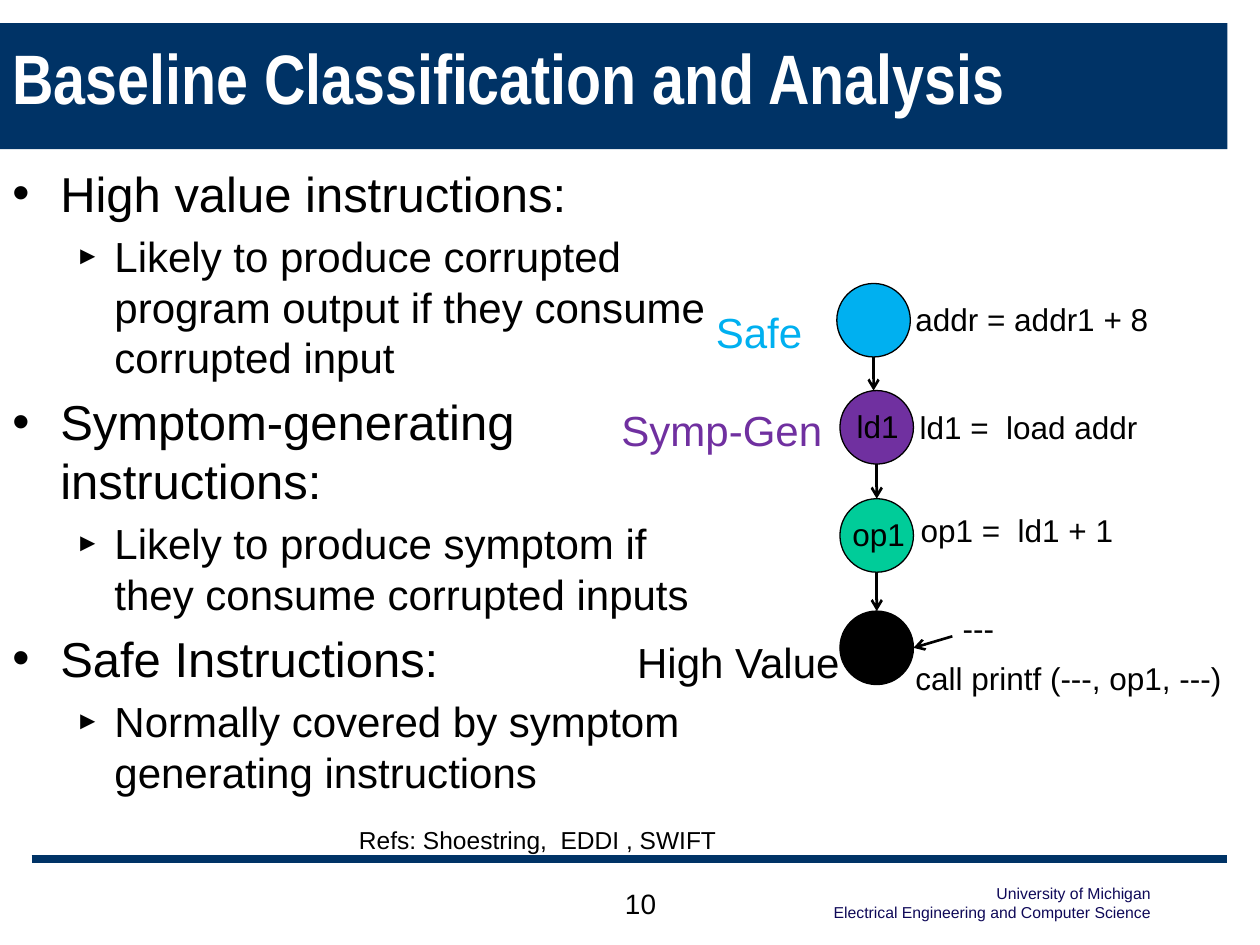
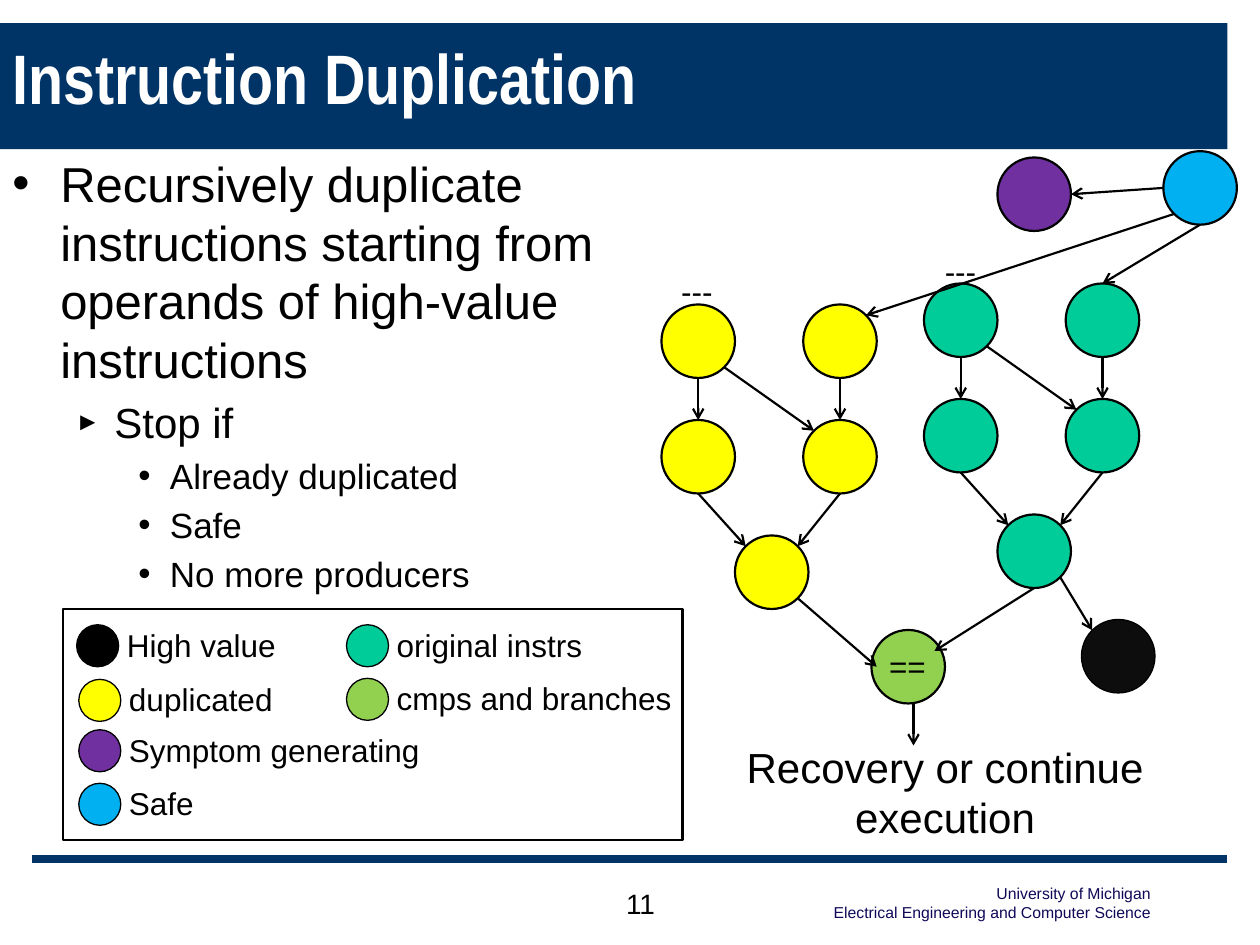
import math
from dataclasses import dataclass

import lxml.etree
import pptx
import pptx.dml.color
import pptx.enum.shapes
import pptx.enum.text
import pptx.oxml.ns
import pptx.util

ALIGN = pptx.enum.text.PP_ALIGN
ANCHOR = pptx.enum.text.MSO_ANCHOR
SHAPE = pptx.enum.shapes.MSO_SHAPE
COLUMNS, ROWS = 120, 90
COMPASS = {"E": 0, "SE": 45, "S": 90, "SW": 135, "W": 180, "NW": 225, "N": 270, "NE": 315}


@dataclass(frozen=True)
class Theme:
    navy: str = "003366"
    footer_ink: str = "0F0958"
    black: str = "000000"
    soft_black: str = "0D0D0D"
    white: str = "FFFFFF"
    safe: str = "00B0F0"
    symptom: str = "7030A0"
    original: str = "00CC99"
    duplicate: str = "FFFF00"
    compare: str = "92D050"
    font: str = "Arial"
    title_font: str = "Arial Narrow"
    title_size: int = 40
    label_size: int = 18
    large_size: int = 24
    reference_size: int = 14
    number_size: int = 16
    footer_size: int = 9
    thin: float = 0.75
    medium: float = 1.25
    thick: float = 1.5
    rule: float = 5


@dataclass(frozen=True)
class Level:
    size: int
    margin: float
    indent: float
    character: str
    scale: int = 100


LEVELS = (
    Level(28, 0.38, -0.38, "•"),
    Level(24, 0.81, -0.31, "►", 60),
    Level(20, 1.25, -0.25, "•"),
)


@dataclass(frozen=True)
class Node:
    left: float
    top: float
    size: float = 7

    def edge(self, direction):
        """Grid point on the circle in a compass direction."""
        angle = math.radians(COMPASS[direction])
        radius = self.size / 2
        return (self.left + radius * (1 + math.cos(angle)),
                self.top + radius * (1 + math.sin(angle)))


def add_element(parent, tag, **attributes):
    element = lxml.etree.SubElement(parent, pptx.oxml.ns.qn(tag))
    for name, value in attributes.items():
        element.set(name, str(value))
    return element


class Deck:
    def __init__(self, theme):
        self.theme = theme
        self.presentation = pptx.Presentation()
        self.presentation.slide_width = pptx.util.Inches(10)
        self.presentation.slide_height = pptx.util.Inches(7.5)
        self.slide = None

    def place(self, column, row):
        return (round(self.presentation.slide_width * column / COLUMNS),
                round(self.presentation.slide_height * row / ROWS))

    def new_slide(self, title, number):
        theme = self.theme
        self.slide = self.presentation.slides.add_slide(self.presentation.slide_layouts[6])
        self.shape(SHAPE.RECTANGLE, 0, 2.2, 116.9, 12, fill=theme.navy)
        self.connector((3, 81.8), (116.9, 81.8), theme.navy, theme.rule)
        self.text(["University of Michigan", "Electrical Engineering and Computer Science"],
                  74.76, 83.6, 36, size=theme.footer_size, color=theme.footer_ink,
                  align=ALIGN.RIGHT)
        self.text([title], 0, 2, 115, 10.6, size=theme.title_size, color=theme.white,
                  font=theme.title_font, bold=True, anchor=ANCHOR.MIDDLE)
        self.text([number], 47, 83.6, 28, size=theme.number_size,
                  align=ALIGN.CENTER, anchor=ANCHOR.MIDDLE)

    def outline(self, line, color, width):
        line.color.rgb = pptx.dml.color.RGBColor.from_string(color)
        line.width = pptx.util.Pt(width)

    def shape(self, kind, left, top, width, height, fill=None, line=None, weight=0.75):
        shape = self.slide.shapes.add_shape(
            kind, *self.place(left, top), *self.place(width, height))
        shape.shadow.inherit = False
        if fill:
            shape.fill.solid()
            shape.fill.fore_color.rgb = pptx.dml.color.RGBColor.from_string(fill)
        else:
            shape.fill.background()
        if line:
            self.outline(shape.line, line, weight)
        else:
            shape.line.fill.background()

    def node(self, left, top, fill, size=7, weight=None):
        self.shape(SHAPE.OVAL, left, top, size, size, fill, self.theme.black,
                   weight or self.theme.thin)
        return Node(left, top, size)

    def connector(self, start, end, color, width):
        connector = self.slide.shapes.add_connector(
            pptx.enum.shapes.MSO_CONNECTOR.STRAIGHT, *self.place(*start), *self.place(*end))
        self.outline(connector.line, color, width)
        add_element(connector._element.spPr, "a:effectLst")
        return connector

    def arrow(self, start, end, width=None):
        connector = self.connector(start, end, self.theme.black, width or self.theme.medium)
        add_element(connector.line._get_or_add_ln(), "a:tailEnd", type="arrow")

    def text_box(self, left, top, width, height, anchor=ANCHOR.TOP):
        box = self.slide.shapes.add_textbox(
            *self.place(left, top), *self.place(width, height))
        box.text_frame.word_wrap = True
        box.text_frame.vertical_anchor = anchor
        return box

    def run(self, paragraph, words, size, color, font=None, bold=False):
        run = paragraph.add_run()
        run.text = words
        run.font.size = pptx.util.Pt(size)
        run.font.name = font or self.theme.font
        run.font.bold = bold
        run.font.color.rgb = pptx.dml.color.RGBColor.from_string(color)

    def paragraph(self, frame, index):
        return frame.add_paragraph() if index else frame.paragraphs[0]

    def text(self, lines, left, top, width, height=4.8, size=None, color=None, font=None,
             bold=False, align=ALIGN.LEFT, anchor=ANCHOR.TOP, border=None):
        box = self.text_box(left, top, width, height, anchor)
        if border:
            self.outline(box.line, border, self.theme.thin)
        for index, words in enumerate(lines):
            paragraph = self.paragraph(box.text_frame, index)
            paragraph.alignment = align
            self.run(paragraph, words, size or self.theme.label_size,
                     color or self.theme.black, font, bold)

    def bullets(self, items, left, top, width, height):
        """Add (level, words) items as a bulleted list."""
        frame = self.text_box(left, top, width, height).text_frame
        for index, (depth, words) in enumerate(items):
            level = LEVELS[depth]
            paragraph = self.paragraph(frame, index)
            paragraph.level = depth
            properties = paragraph._p.get_or_add_pPr()
            properties.set("marL", str(pptx.util.Inches(level.margin)))
            properties.set("indent", str(pptx.util.Inches(level.indent)))
            add_element(properties, "a:buSzPct", val=level.scale * 1000)
            add_element(properties, "a:buFont", typeface=self.theme.font)
            add_element(properties, "a:buChar", char=level.character)
            if index:
                paragraph.space_before = pptx.util.Pt(level.size * 0.2)
            self.run(paragraph, words, level.size, self.theme.black)

    def dependency_graph(self, left, top, fill):
        """Draw two rows of two nodes that feed one result; return the ends."""
        weight = self.theme.medium
        (first, second), (third, fourth) = (
            [self.node(left + across, top + down, fill, weight=weight) for across in (0, 13.5)]
            for down in (0, 11))
        result = self.node(left + 7, top + 22, fill, weight=weight)
        for source, leaving, target, entering in (
                (first, "S", third, "N"), (second, "S", fourth, "N"),
                (first, "SE", fourth, "NW"), (third, "S", result, "NW"),
                (fourth, "S", result, "NE")):
            self.arrow(source.edge(leaving), target.edge(entering))
        return second, result

    def legend_entry(self, left, top, fill, words):
        self.node(left, top, fill, size=4)
        self.text([words], left + 3.6, top - 0.5, 32)


def build_classification(deck):
    theme = deck.theme
    deck.new_slide("Baseline Classification and Analysis", "10")
    deck.bullets([
        (0, "High value instructions:"),
        (1, "Likely to produce corrupted program output if they consume corrupted input"),
        (0, "Symptom-generating instructions:"),
        (1, "Likely to produce symptom if they consume corrupted inputs"),
        (0, "Safe Instructions:"),
        (1, "Normally covered by symptom generating instructions"),
    ], 0, 15, 70, 66)
    deck.text(["Refs: Shoestring,  EDDI , SWIFT"], 33, 78, 50, 4, size=theme.reference_size)

    address = deck.node(79.7, 27, theme.safe)
    load = deck.node(80, 37.2, theme.symptom)
    operation = deck.node(80, 47.5, theme.original)
    call = deck.node(80, 58.2, theme.black)
    for source, target in ((address, load), (load, operation), (operation, call)):
        column, bottom = source.edge("S")
        deck.arrow((column, bottom), (column, target.top), theme.thick)
    deck.arrow((90.7, 60.6), call.edge("E"), theme.thick)

    for words, left, top, width in (
            ("ld1", 80.4, 38.2, 8.2), ("op1", 80, 48.5, 9),
            ("addr = addr1 + 8", 86, 28, 27), ("ld1 =  load addr", 86.4, 38.3, 27),
            ("op1 =  ld1 + 1", 86.5, 48.1, 25), ("---", 90.5, 57.4, 8),
            ("call printf (---, op1, ---)", 86, 62.2, 34)):
        deck.text([words], left, top, width)
    for words, left, top, width, color, border in (
            ("Safe", 67, 28.6, 12, theme.safe, theme.white),
            ("Symp-Gen", 58, 37.9, 28, theme.symptom, None),
            ("High Value", 59.5, 60, 22.5, theme.black, None)):
        deck.text([words], left, top, width, 6, size=theme.large_size, color=color,
                  border=border)


def build_duplication(deck):
    theme = deck.theme
    deck.new_slide("Instruction Duplication", "11")
    deck.bullets([
        (0, "Recursively duplicate instructions starting from operands of "
            "high-value instructions"),
        (1, "Stop if"),
        (2, "Already duplicated"),
        (2, "Safe"),
        (2, "No more producers"),
    ], 0, 14, 69, 65.4)

    original_input, original_result = deck.dependency_graph(88, 27, theme.original)
    duplicate_input, duplicate_result = deck.dependency_graph(63, 29, theme.duplicate)
    safe = deck.node(110.8, 14.4, theme.safe, weight=theme.medium)
    symptom = deck.node(95, 15, theme.symptom, weight=theme.medium)
    compare = deck.node(83, 60, theme.compare, weight=theme.medium)
    high_value = deck.node(103, 59, theme.soft_black)
    for start, end in (
            (safe.edge("W"), symptom.edge("E")),
            (safe.edge("S"), original_input.edge("N")),
            (safe.edge("SW"), duplicate_input.edge("NE")),
            (duplicate_result.edge("SE"), (83.5, 63.5)),
            (original_result.edge("S"), (89, 62)),
            (original_result.edge("SE"), high_value.edge("NW")),
            ((87, 67), (87, 71))):
        deck.arrow(start, end)
    for words, left, top in (("==", 83.5, 61), ("---", 63.7, 25.3), ("---", 88.8, 23.4)):
        deck.text([words], left, top, 7)
    deck.text(["Recovery or continue execution"], 67, 70, 46, 10.9,
              size=theme.large_size, align=ALIGN.CENTER)

    deck.shape(SHAPE.RECTANGLE, 6, 58, 59, 22, line=theme.black, weight=theme.thick)
    for left, top, fill, words in (
            (7.3, 59.5, theme.black, "High value"),
            (7.5, 64.7, theme.duplicate, "duplicated"),
            (7.5, 69.5, theme.symptom, "Symptom generating"),
            (7.5, 74.6, theme.safe, "Safe"),
            (33, 59.5, theme.original, "original instrs"),
            (33, 64.6, theme.compare, "cmps and branches")):
        deck.legend_entry(left, top, fill, words)


def main():
    deck = Deck(Theme())
    build_classification(deck)
    build_duplication(deck)
    deck.presentation.save("out.pptx")


if __name__ == "__main__":
    main()
